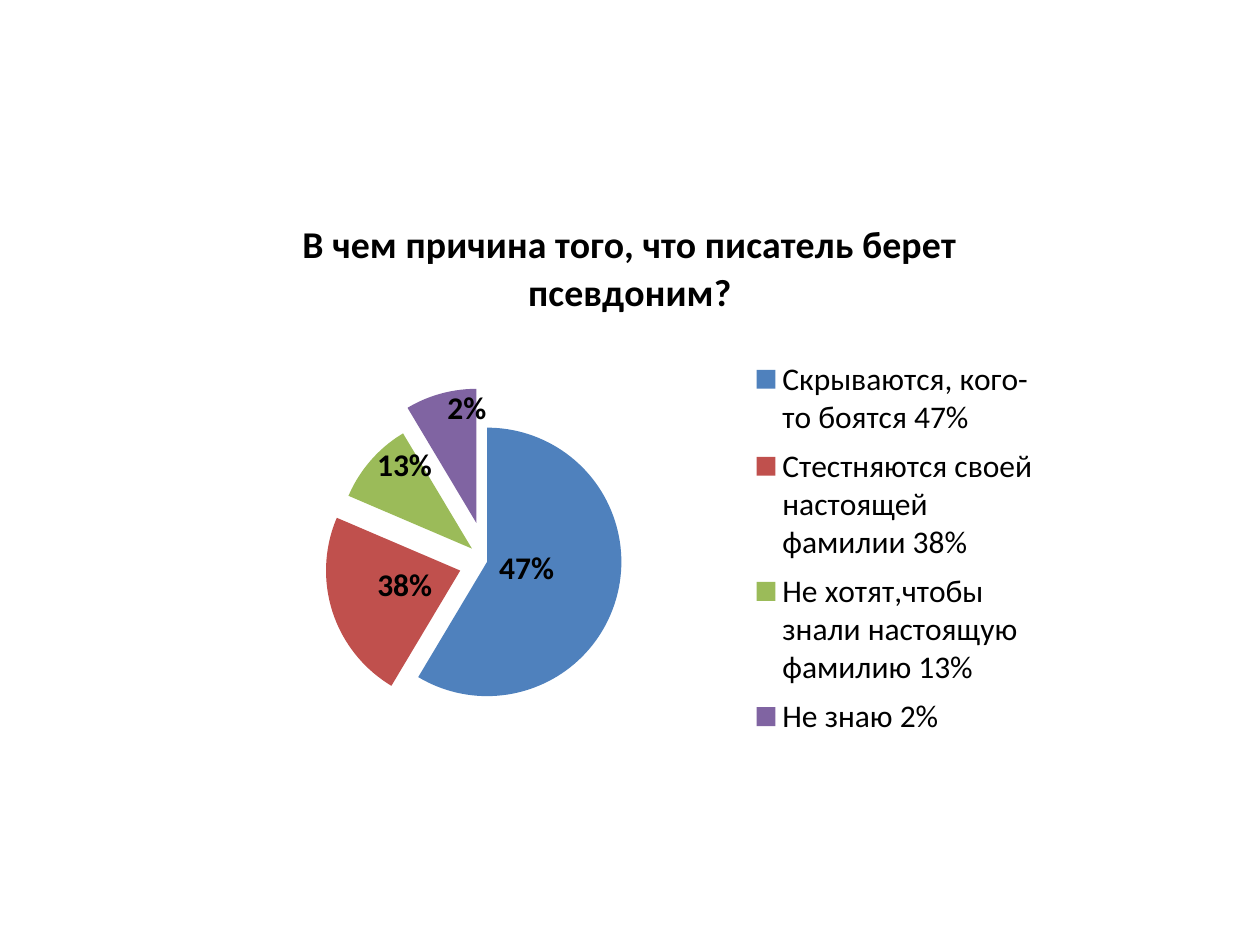
from lxml import etree
from pptx import Presentation
from pptx.chart.data import CategoryChartData
from pptx.dml.color import RGBColor
from pptx.enum.chart import XL_CHART_TYPE, XL_LABEL_POSITION, XL_LEGEND_POSITION
from pptx.oxml import parse_xml
from pptx.oxml.ns import nsdecls, qn
from pptx.util import Inches, Pt

PIE = XL_CHART_TYPE.PIE
CENTER = XL_LABEL_POSITION.CENTER
RIGHT = XL_LEGEND_POSITION.RIGHT
BLACK = RGBColor(0x00, 0x00, 0x00)
BLUE = RGBColor(0x4F, 0x81, 0xBD)
RED = RGBColor(0xC0, 0x50, 0x4D)
GREEN = RGBColor(0x9B, 0xBB, 0x59)
PURPLE = RGBColor(0x80, 0x64, 0xA2)

QUESTION = "В чем причина того, что писатель берет псевдоним?"
SLICES = [
    ("Скрываются, кого-то боятся 47%", 8.2, "47%", BLUE, 0, (-0.03, -0.02)),
    ("Стестняются своей настоящей фамилии 38%", 3.2, "38%", RED, 21, (0.01, -0.01)),
    ("Не хотят,чтобы знали настоящую фамилию 13%", 1.4, "13%", GREEN, 15, (-0.02, -0.07)),
    ("Не знаю 2%", 1.2, "2%", PURPLE, 30, (0.01, -0.09)),
]


class Deck:
    """Holds the style and the current slide, with lengths as shares of its size."""

    def __init__(self, width, height, font="Calibri"):
        self.prs = Presentation()
        self.prs.slide_width, self.prs.slide_height = Inches(width), Inches(height)
        self.font = font
        self.s = self.prs.slides.add_slide(self.prs.slide_layouts[6])

    def style(self, font, size, bold=False):
        font.name, font.size, font.bold = self.font, Pt(size), bold
        font.color.rgb = BLACK

    def layout(self, **values):
        inner = "".join(f'<c:{key} val="{val}"/>' for key, val in values.items())
        return parse_xml(f'<c:layout {nsdecls("c")}><c:manualLayout>{inner}'
                         '</c:manualLayout></c:layout>')

    def place(self, parent, after, box, **modes):
        for old in parent.findall(qn("c:layout")):
            parent.remove(old)
        node = self.layout(**modes, xMode="edge", yMode="edge", **dict(zip("xywh", box)))
        parent.insert(after, node)

    def pie(self, x, y, w, h, title, slices, plot, key):
        data = CategoryChartData()
        data.categories = [row[0] for row in slices]
        data.add_series(title, [row[1] for row in slices])
        width, height = self.prs.slide_width, self.prs.slide_height
        chart = self.s.shapes.add_chart(PIE, int(x * width), int(y * height),
                                        int(w * width), int(h * height), data).chart
        self.style(chart.font, 18)
        tf = chart.chart_title.text_frame
        tf.text = title
        self.style(tf.paragraphs[0].runs[0].font, 21.6, True)
        chart.has_legend = True
        chart.legend.position = RIGHT
        chart.legend.include_in_layout = False
        self.style(chart.legend.font, 18)
        chart.plots[0].vary_by_categories = True
        series = chart.plots[0].series[0]
        for i, (_, _, label, color, explosion, shift) in enumerate(slices):
            self.slice(series.points[i], label, color, explosion, shift)
        labels = series.data_labels
        labels.show_value = True
        self.style(labels.font, 18, True)
        self.place(chart.plots[0]._element.getparent(), 0, plot, layoutTarget="inner")
        self.place(chart.legend._element, 1, key)

    def slice(self, point, label, color, explosion, shift):
        fill = point.format.fill
        fill.solid()
        fill.fore_color.rgb = color
        if explosion:
            node = etree.Element(qn("c:explosion"), val=str(explosion))
            fill._xPr.addprevious(node)
        tf = point.data_label.text_frame
        tf.text = label
        self.style(tf.paragraphs[0].runs[0].font, 18, True)
        point.data_label.position = CENTER
        tf._txBody.getparent().addprevious(self.layout(x=shift[0], y=shift[1]))


def main():
    deck = Deck(10, 7.5)
    deck.pie(1 / 6, 1.53 / 7.5, 2 / 3, 4.44 / 7.5, QUESTION, SLICES,
             plot=(0.17, 0.42, 0.32, 0.48), key=(0.64, 0.28, 0.35, 0.71))
    deck.prs.save("out.pptx")


if __name__ == "__main__":
    main()
